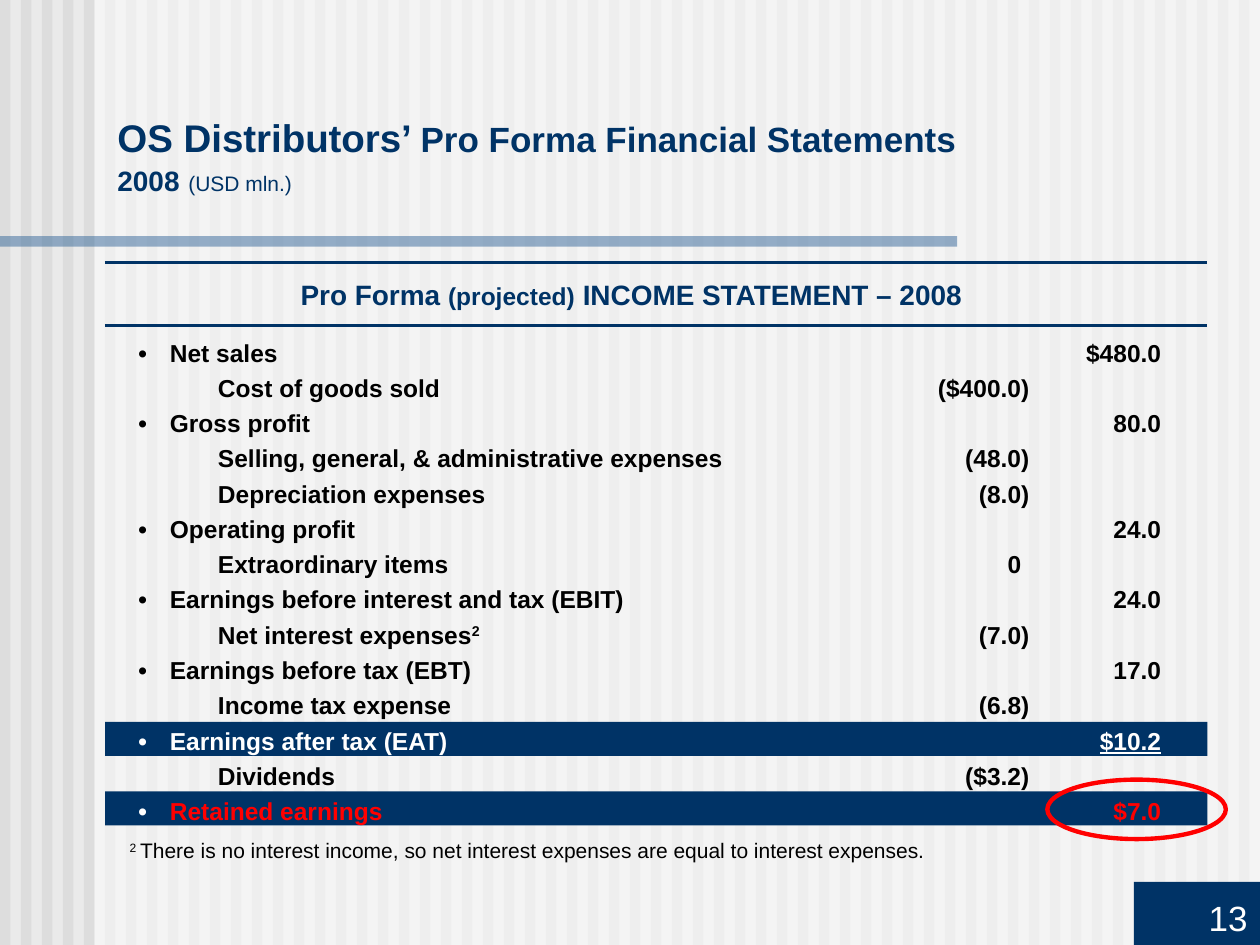
from dataclasses import dataclass, field

from lxml import etree
from pptx import Presentation
from pptx.dml.color import RGBColor
from pptx.enum.shapes import MSO_CONNECTOR, MSO_SHAPE
from pptx.enum.text import MSO_ANCHOR, PP_ALIGN
from pptx.oxml.ns import qn
from pptx.util import Pt

RECTANGLE, ELLIPSE = MSO_SHAPE.RECTANGLE, MSO_SHAPE.OVAL
STRAIGHT = MSO_CONNECTOR.STRAIGHT
TOP, BOTTOM = MSO_ANCHOR.TOP, MSO_ANCHOR.BOTTOM
LEFT, CENTER, RIGHT = PP_ALIGN.LEFT, PP_ALIGN.CENTER, PP_ALIGN.RIGHT

COLORS = {
    "background": "EAEAEA",
    "stripe": "DDDDDD",
    "white": "FFFFFF",
    "accent": "336699",
    "navy": "003366",
    "black": "000000",
    "red": "FF0000",
}
SLIDE_WIDTH, SLIDE_HEIGHT = 720, 540
STRIPE_COUNT, STRIPE_PITCH, STRIPE_WIDTH = 60, 12, 6
TABLE_LEFT, TABLE_RIGHT = 60, 690
RULE_POSITIONS = (150, 186)
HIGHLIGHT_POSITIONS = (412.5, 452.25)
TAB_STOPS = ((18, "l"), (45.5, "l"), (504.5, "r"), (508, "r"), (584.5, "r"))
ROW_SPACING = 1.2


@dataclass
class Box:
    left: float
    top: float
    width: float
    height: float

    def lengths(self) -> list:
        return [Pt(value) for value in (self.left, self.top, self.width, self.height)]


@dataclass
class TextRun:
    text: str
    size: float = 14
    color: str = "black"
    raised: bool = False
    style: dict = field(default_factory=dict)


@dataclass
class StatementRow:
    """A total goes in the right column, a detail in the inner column."""
    label: str
    value: str
    is_total: bool = False
    note: str = ""
    bullet_color: str = "black"
    color: str = "black"
    underline: bool = False

    def runs(self) -> list[TextRun]:
        bold = {"bold": True}
        if self.is_total:
            return [
                TextRun("•\t", color=self.bullet_color, style=bold),
                TextRun(f"{self.label}\t\t\t", color=self.color, style=bold),
                TextRun(self.value, color=self.color,
                        style={"bold": True, "underline": self.underline}),
            ]
        amount = self.value.replace(")", "\t)")
        runs = [TextRun(f"\t\t{self.label}", style=bold)]
        if self.note:
            runs.append(TextRun(self.note, raised=True, style=bold))
        return runs + [TextRun(f"\t{amount}", style=bold)]


STATEMENT = [
    StatementRow("Net sales", "$480.0", True),
    StatementRow("Cost of goods sold", "($400.0)"),
    StatementRow("Gross profit", "80.0", True),
    StatementRow("Selling, general, & administrative expenses", "(48.0)"),
    StatementRow("Depreciation expenses", "(8.0)"),
    StatementRow("Operating profit", "24.0", True),
    StatementRow("Extraordinary items", "0"),
    StatementRow("Earnings before interest and tax (EBIT)", "24.0", True),
    StatementRow("Net interest expenses", "(7.0)", note="2"),
    StatementRow("Earnings before tax (EBT)", "17.0", True),
    StatementRow("Income tax expense", "(6.8)"),
    StatementRow("Earnings after tax (EAT)", "$10.2", True,
                 bullet_color="white", color="white", underline=True),
    StatementRow("Dividends", "($3.2)"),
    StatementRow("Retained earnings", "$7.0", True, bullet_color="white", color="red"),
]


def rgb(name: str) -> RGBColor:
    return RGBColor.from_string(COLORS[name])


def add_filled_shape(slide, box: Box, color: str, opacity: int = 100):
    shape = slide.shapes.add_shape(RECTANGLE, *box.lengths())
    shape.shadow.inherit = False
    shape.fill.solid()
    shape.fill.fore_color.rgb = rgb(color)
    shape.line.fill.background()
    if opacity < 100:
        color_element = shape.fill._xPr.find(".//" + qn("a:srgbClr"))
        etree.SubElement(color_element, qn("a:alpha"), val=str(opacity * 1000))
    return shape


def add_rule(slide, top: float) -> None:
    rule = slide.shapes.add_connector(
        STRAIGHT, Pt(TABLE_LEFT), Pt(top), Pt(TABLE_RIGHT), Pt(top))
    rule.line.color.rgb = rgb("navy")
    rule.line.width = Pt(2.25)
    etree.SubElement(rule._element.spPr, qn("a:effectLst"))


def add_runs(paragraph, runs: list[TextRun]) -> None:
    for text_run in runs:
        run = paragraph.add_run()
        run.text = text_run.text
        formats = {"name": "Arial", "size": Pt(text_run.size), **text_run.style}
        for attribute, value in formats.items():
            setattr(run.font, attribute, value)
        run.font.color.rgb = rgb(text_run.color)
        if text_run.raised:
            run._r.get_or_add_rPr().set("baseline", "30000")


def add_text(slide, box: Box, lines: list[list[TextRun]], alignment=LEFT,
             anchor=TOP, wrap: bool = True) -> None:
    """Write the lines as one paragraph with line breaks."""
    frame = slide.shapes.add_textbox(*box.lengths()).text_frame
    frame.word_wrap = wrap
    frame.vertical_anchor = anchor
    paragraph = frame.paragraphs[0]
    paragraph.alignment = alignment
    for index, runs in enumerate(lines):
        if index:
            paragraph.add_line_break()
        add_runs(paragraph, runs)


def add_statement(slide, box: Box) -> None:
    frame = slide.shapes.add_textbox(*box.lengths()).text_frame
    frame.word_wrap = True
    for index, row in enumerate(STATEMENT):
        paragraph = frame.add_paragraph() if index else frame.paragraphs[0]
        paragraph.line_spacing = ROW_SPACING
        tabs = etree.SubElement(paragraph._p.get_or_add_pPr(), qn("a:tabLst"))
        for position, side in TAB_STOPS:
            etree.SubElement(tabs, qn("a:tab"), pos=str(Pt(position)), algn=side)
        add_runs(paragraph, row.runs())


def add_background(slide) -> None:
    slide.background.fill.solid()
    slide.background.fill.fore_color.rgb = rgb("background")
    for index in range(STRIPE_COUNT):
        add_filled_shape(
            slide, Box(index * STRIPE_PITCH, 0, STRIPE_WIDTH, SLIDE_HEIGHT), "stripe")
    add_filled_shape(slide, Box(54, 0, SLIDE_WIDTH - 54, SLIDE_HEIGHT), "white", 50)
    add_filled_shape(slide, Box(0, 135, 547, 6), "accent", 50)


def add_page_number(slide) -> None:
    shape = add_filled_shape(slide, Box(648, 504, 72, 36), "navy")
    shape.text_frame.vertical_anchor = BOTTOM
    paragraph = shape.text_frame.paragraphs[0]
    paragraph.alignment = RIGHT
    add_runs(paragraph, [TextRun("13", 20, "white")])


def main() -> None:
    presentation = Presentation()
    presentation.slide_width, presentation.slide_height = Pt(SLIDE_WIDTH), Pt(SLIDE_HEIGHT)
    slide = presentation.slides.add_slide(presentation.slide_layouts[6])
    bold = {"bold": True}

    add_background(slide)
    add_page_number(slide)
    add_text(slide, Box(60, 32.5, 660, 84), [
        [TextRun("OS Distributors’ ", 22, "navy", style=bold),
         TextRun("Pro Forma Financial Statements", 20, "navy", style=bold)],
        [TextRun("2008", 16, "navy", style=bold),
         TextRun(" ", 18, "navy", style=bold),
         TextRun("(USD mln.)", 12, "navy")],
    ], anchor=BOTTOM)

    for top in HIGHLIGHT_POSITIONS:
        add_filled_shape(slide, Box(TABLE_LEFT, top, TABLE_RIGHT - TABLE_LEFT, 19.5), "navy")
    add_statement(slide, Box(72, 186, 648, 289))
    add_text(slide, Box(67, 474, 653, 21.5), [[
        TextRun("2", 12, raised=True),
        TextRun(" ", 13, raised=True),
        TextRun("There is no interest income, so net interest expenses "
                "are equal to interest expenses.", 12),
    ]])
    add_text(slide, Box(163.5, 155, 394.5, 26.5), [[
        TextRun("Pro Forma ", 16, "navy", style=bold),
        TextRun("(projected)", 14, "navy", style=bold),
        TextRun(" INCOME STATEMENT – 2008", 16, "navy", style=bold),
    ]], alignment=CENTER, wrap=False)
    for top in RULE_POSITIONS:
        add_rule(slide, top)

    ring = slide.shapes.add_shape(ELLIPSE, *Box(598.5, 445.5, 102, 34).lengths())
    ring.shadow.inherit = False
    ring.fill.background()
    ring.line.color.rgb = rgb("red")
    ring.line.width = Pt(2.5)
    presentation.save("out.pptx")


if __name__ == "__main__":
    main()
